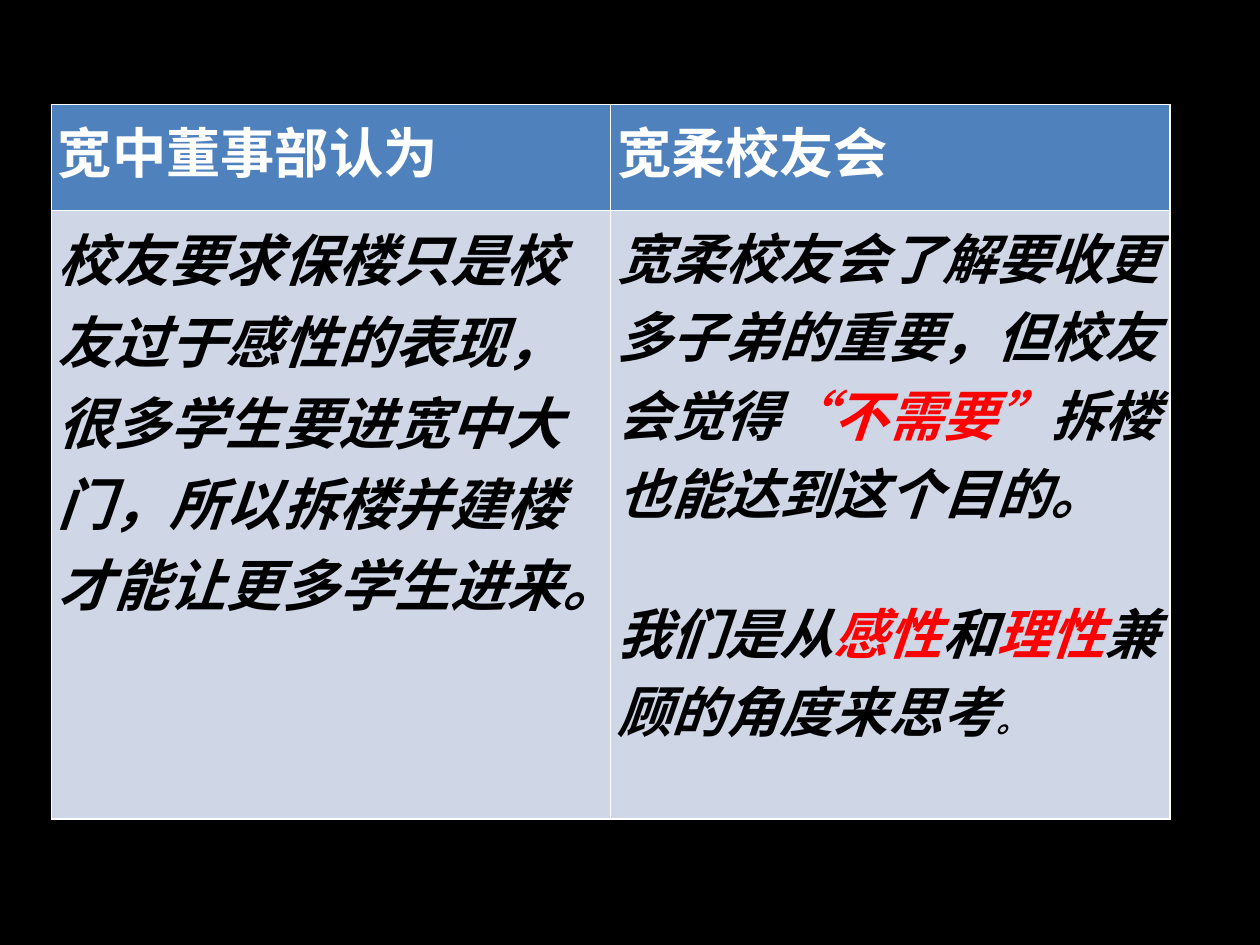
from pptx import Presentation
from pptx.dml.color import RGBColor
from pptx.enum.lang import MSO_LANGUAGE_ID
from pptx.util import Pt

ZH = MSO_LANGUAGE_ID.SIMPLIFIED_CHINESE

THEME = {
    "font": "Calibri",
    "back": "000000", "head": "4F81BD", "body": "CFD7E7",
    "white": "FFFFFF", "ink": "000000", "red": "FF0000",
    "size": 31, "large": 32, "small": 18,
    "inset": 3.6, "gap": 35,
}

INK = {"color": "ink", "italic": True}
RED = {"color": "red", "italic": True}
LARGE = {**INK, "size": "large"}
SMALL = {**INK, "size": "small"}
HEAD = {"color": "white"}

ROWS = [
    ("head", 60.5, [
        [[("宽中董事部认为", HEAD)]],
        [[("宽柔校友会", HEAD)]],
    ]),
    ("body", 347.8, [
        [[("校友要求保楼只是校友过于感性的表现，很多学生要进宽中大门，"
           "所以拆楼并建楼才能让更多学生进来。", LARGE)]],
        [
            [("宽柔校友会了解要收更多子弟的重要，但校友会觉得", INK),
             ("“不需要”", RED),
             ("拆楼也能达到这个目的。", INK)],
            [("我们是从", INK), ("感性", RED), ("和", INK),
             ("理性", RED), ("兼顾的角度来思考", INK), ("。", SMALL)],
        ],
    ]),
]
LEFT, TOP, WIDTH = 29.5, 59.8, 639


def paint(fill, name):
    fill.solid()
    fill.fore_color.rgb = RGBColor.from_string(THEME[name])


def write(para, text, color="ink", size="size", italic=False):
    run = para.add_run()
    run.text = text
    font = run.font
    font.name = THEME["font"]
    font.size = Pt(THEME[size])
    font.bold = True
    font.italic = italic
    font.language_id = ZH
    font.color.rgb = RGBColor.from_string(THEME[color])


def fill_cell(cell, paras, tone):
    paint(cell.fill, tone)
    inset = Pt(THEME["inset"])
    cell.margin_left = cell.margin_right = inset
    cell.margin_top = cell.margin_bottom = inset
    frame = cell.text_frame
    for i, runs in enumerate(paras):
        para = frame.add_paragraph() if i else frame.paragraphs[0]
        if i:
            para.space_before = Pt(THEME["gap"])
        for text, style in runs:
            write(para, text, **style)


def main():
    deck = Presentation()
    deck.slide_width, deck.slide_height = Pt(720), Pt(540)
    slide = deck.slides.add_slide(deck.slide_layouts[6])
    paint(slide.background.fill, "back")

    cols = len(ROWS[0][2])
    high = sum(row[1] for row in ROWS)
    table = slide.shapes.add_table(
        len(ROWS), cols, Pt(LEFT), Pt(TOP), Pt(WIDTH), Pt(high)).table
    for col in table.columns:
        col.width = Pt(WIDTH / cols)
    for r, (tone, height, cells) in enumerate(ROWS):
        table.rows[r].height = Pt(height)
        for c, paras in enumerate(cells):
            fill_cell(table.cell(r, c), paras, tone)

    deck.save("out.pptx")


if __name__ == "__main__":
    main()
